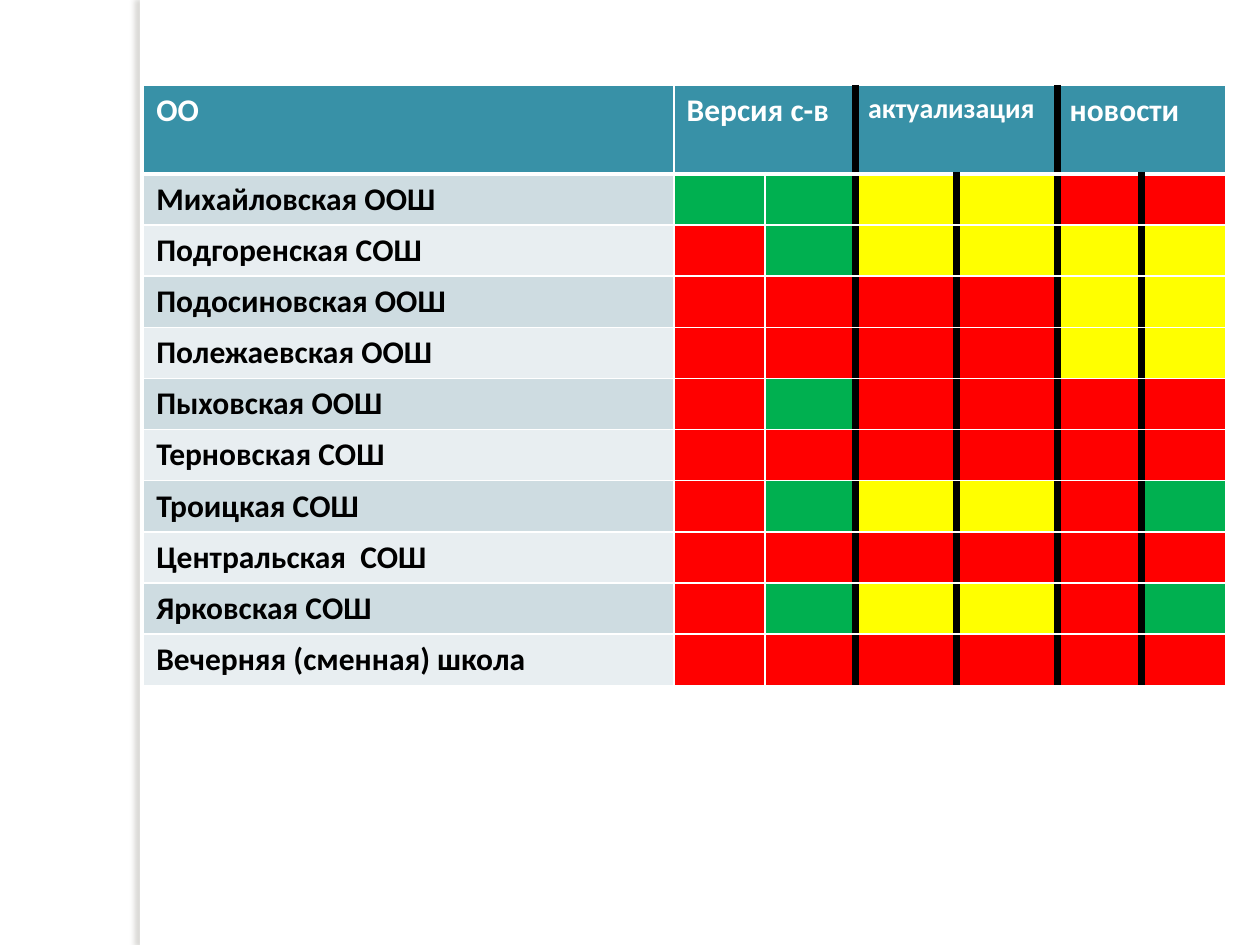
import pptx
import pptx.util
import pptx.dml.color
import pptx.enum.shapes
import pptx.oxml
import pptx.oxml.ns
import lxml.etree

Inches = pptx.util.Inches
Pt = pptx.util.Pt
WIDE, HIGH = 10, 7.5
COLORS = {
    "white": "FFFFFF", "black": "000000", "head": "3891A7",
    "odd": "CEDCE1", "even": "E8EEF1", "shade": "736F63",
    "G": "00B050", "Y": "FFFF00", "R": "FF0000",
}
COLS = [4.21, 0.72, 0.72, 0.8, 0.8, 0.67, 0.67]
HEAD_ROW, BODY_ROW = 0.7, 0.406
HEADS = {0: ("ОО", 18), 1: ("Версия с-в", 18),
         3: ("актуализация", 16), 5: ("новости", 18)}
# One letter per cell: green, yellow or red
SCHOOLS = [
    ("Михайловская ООШ", "GGYYRR"),
    ("Подгоренская СОШ", "RGYYYY"),
    ("Подосиновская ООШ", "RRRRYY"),
    ("Полежаевская ООШ", "RRRRYY"),
    ("Пыховская ООШ", "RGRRRR"),
    ("Терновская СОШ", "RRRRRR"),
    ("Троицкая СОШ", "RGYYRG"),
    ("Центральская  СОШ", "RRRRRR"),
    ("Ярковская СОШ", "RGYYRG"),
    ("Вечерняя (сменная) школа", "RRRRRR"),
]
HEAD_BARS = {3, 5}
BODY_BARS = {3, 4, 5, 6}


def rgb(name):
    return pptx.dml.color.RGBColor.from_string(COLORS[name])


def add_strip(slide):
    """Add the white strip that casts a soft shadow to the left."""
    strip = slide.shapes.add_shape(
        pptx.enum.shapes.MSO_SHAPE.RECTANGLE,
        Inches(1.11), 0, Inches(0.08), Inches(HIGH))
    strip.fill.solid()
    strip.fill.fore_color.rgb = rgb("white")
    strip.line.fill.background()
    strip.shadow.inherit = False
    effects = strip._element.spPr.find(pptx.oxml.ns.qn("a:effectLst"))
    effects.append(pptx.oxml.parse_xml(
        f'<a:outerShdw {pptx.oxml.ns.nsdecls("a")} blurRad="{Pt(3)}" '
        f'dist="{Pt(3)}" dir="10800000" algn="tl" rotWithShape="0">'
        f'<a:srgbClr val="{COLORS["shade"]}"><a:alpha val="25000"/>'
        '</a:srgbClr></a:outerShdw>'))


def set_edge(cell, side, color, width):
    props = cell._tc.get_or_add_tcPr()
    edge = lxml.etree.SubElement(
        props, pptx.oxml.ns.qn(f"a:ln{side}"), w=str(Pt(width)))
    fill = lxml.etree.SubElement(edge, pptx.oxml.ns.qn("a:solidFill"))
    lxml.etree.SubElement(
        fill, pptx.oxml.ns.qn("a:srgbClr"), val=COLORS[color])


def set_edges(cell, row, col):
    bars = BODY_BARS if row else HEAD_BARS
    thick, thin = ("black", 4.5), ("white", 1)
    set_edge(cell, "L", *(thick if col in bars else thin))
    set_edge(cell, "R", *(thick if col + 1 in bars else thin))
    set_edge(cell, "T", "white", 3 if row == 1 else 1)
    set_edge(cell, "B", "white", 1 if row else 3)


def paint(cell, color):
    cell.fill.solid()
    cell.fill.fore_color.rgb = rgb(color)


def write(cell, text, size, color):
    cell.text_frame.text = text
    font = cell.text_frame.paragraphs[0].runs[0].font
    font.name, font.size, font.bold = "Calibri", Pt(size), True
    font.color.rgb = rgb(color)


def add_grid(slide):
    rows = len(SCHOOLS) + 1
    table = slide.shapes.add_table(
        rows, len(COLS), Inches(1.14), Inches(0.68), Inches(sum(COLS)),
        Inches(HEAD_ROW + BODY_ROW * len(SCHOOLS))).table
    for col, width in zip(table.columns, COLS):
        col.width = Inches(width)
    for num, row in enumerate(table.rows):
        row.height = Inches(BODY_ROW if num else HEAD_ROW)
    for row in range(rows):
        for col in range(len(COLS)):
            set_edges(table.cell(row, col), row, col)

    for col in range(len(COLS)):
        paint(table.cell(0, col), "head")
    for col, (text, size) in HEADS.items():
        if col:
            table.cell(0, col).merge(table.cell(0, col + 1))
        write(table.cell(0, col), text, size, "white")
    for row, (name, marks) in enumerate(SCHOOLS, 1):
        write(table.cell(row, 0), name, 18, "black")
        paint(table.cell(row, 0), "odd" if row % 2 else "even")
        for col, mark in enumerate(marks, 1):
            paint(table.cell(row, col), mark)


def main():
    deck = pptx.Presentation()
    deck.slide_width, deck.slide_height = Inches(WIDE), Inches(HIGH)
    slide = deck.slides.add_slide(deck.slide_layouts[6])
    add_strip(slide)
    add_grid(slide)
    deck.save("out.pptx")


if __name__ == "__main__":
    main()
